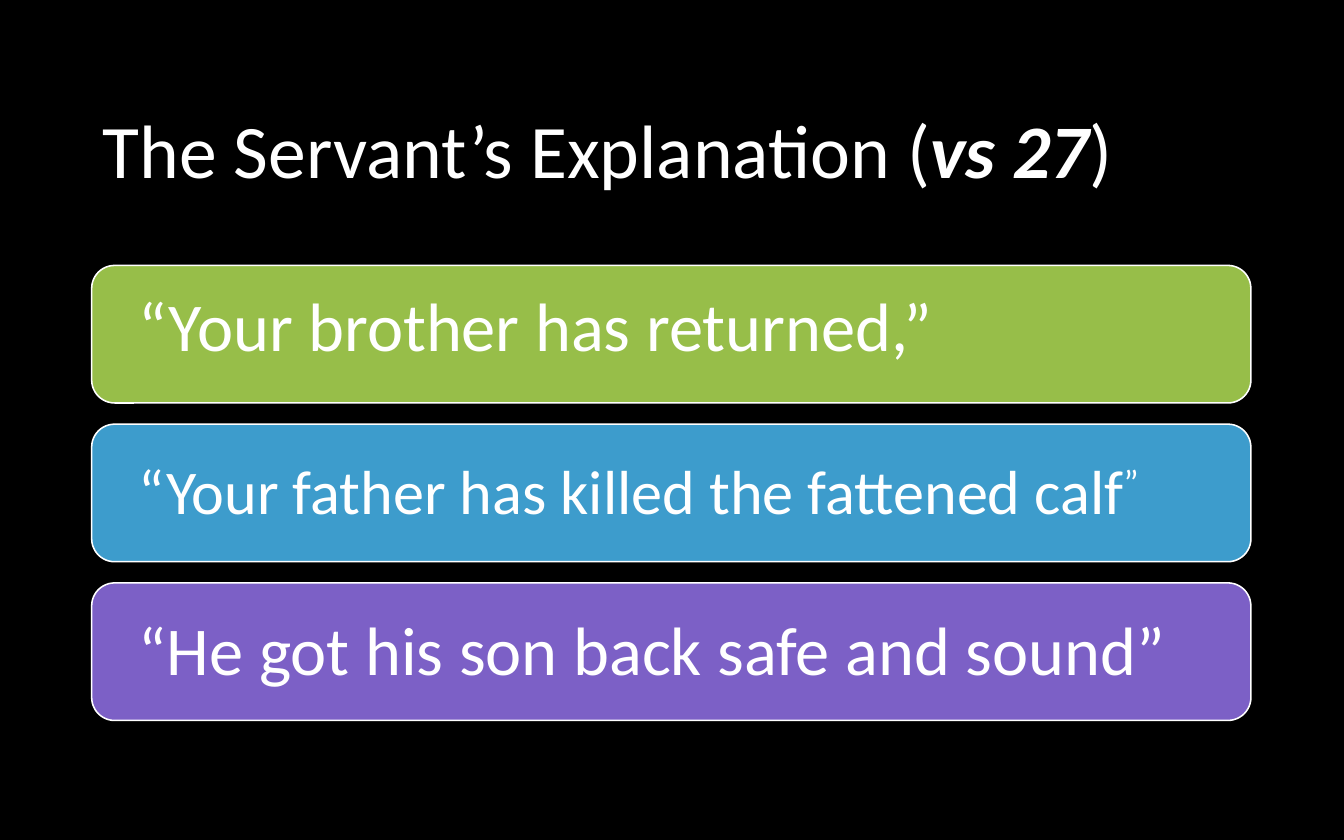
"""Build a slide with the servant's explanation as three coloured quote bars."""
from pptx import Presentation
from pptx.dml.color import RGBColor
from pptx.enum import shapes, text
from pptx.util import Cm, Pt

BLACK = RGBColor(0x00, 0x00, 0x00)
WHITE = RGBColor(0xFF, 0xFF, 0xFF)
GREEN = RGBColor(0x97, 0xBE, 0x49)
BLUE = RGBColor(0x3D, 0x9C, 0xCC)
PURPLE = RGBColor(0x7C, 0x60, 0xC6)
FONT = "Calibri"

TITLE = [
    ("The Servant’s Explanation (", 48.6, {}),
    ("vs 27", 48.6, {"b": "1", "i": "1"}),
    (")", 48.6, {}),
]
QUOTES = [
    (GREEN, 6.3, 24.69, 2.13, [("“Your brother has returned,”", 44, {})]),
    (BLUE, 10.13, 23.9, 1.96, [
        ("“Your father has killed the fattened calf", 40, {}),
        ("”", 40, {"baseline": "30000"}),
    ]),
    (PURPLE, 13.64, 25.1, 2.13, [
        ("“", 43.2, {}),
        ("He got his son back safe and sound”", 44, {}),
    ]),
]

LEFT, WIDTH = 2.08, 26.29
BAR_TOP, BAR_HEIGHT, BAR_STEP = 6.02, 3.12, 3.6
QUOTE_LEFT = 2.9


def add_text(slide, left, top, width, height, runs):
    box = slide.shapes.add_textbox(Cm(left), Cm(top), Cm(width), Cm(height))
    frame = box.text_frame
    frame.word_wrap = True
    for words, size, marks in runs:
        run = frame.paragraphs[0].add_run()
        run.text = words
        run.font.name = FONT
        run.font.size = Pt(size)
        run.font.color.rgb = WHITE
        for mark, value in marks.items():
            run._r.get_or_add_rPr().set(mark, value)
    return frame


def add_bar(slide, row, color):
    bar = slide.shapes.add_shape(
        shapes.MSO_SHAPE.ROUNDED_RECTANGLE,
        Cm(LEFT), Cm(BAR_TOP + row * BAR_STEP), Cm(WIDTH), Cm(BAR_HEIGHT))
    bar.shadow.inherit = False
    bar.fill.solid()
    bar.fill.fore_color.rgb = color
    bar.line.color.rgb = WHITE
    bar.line.width = Pt(1)


def main():
    deck = Presentation()
    deck.slide_width, deck.slide_height = Cm(30.48), Cm(19.05)
    slide = deck.slides.add_slide(deck.slide_layouts[6])
    slide.background.fill.solid()
    slide.background.fill.fore_color.rgb = BLACK

    title = add_text(slide, LEFT, 1.85, WIDTH, 3.3, TITLE)
    title.vertical_anchor = text.MSO_ANCHOR.MIDDLE
    title.paragraphs[0].line_spacing = 0.9

    for row, (color, *_) in enumerate(QUOTES):
        add_bar(slide, row, color)
    for _, top, width, height, runs in QUOTES:
        quote = add_text(slide, QUOTE_LEFT, top, width, height, runs)
        quote.auto_size = text.MSO_AUTO_SIZE.SHAPE_TO_FIT_TEXT

    deck.save("out.pptx")


if __name__ == "__main__":
    main()
